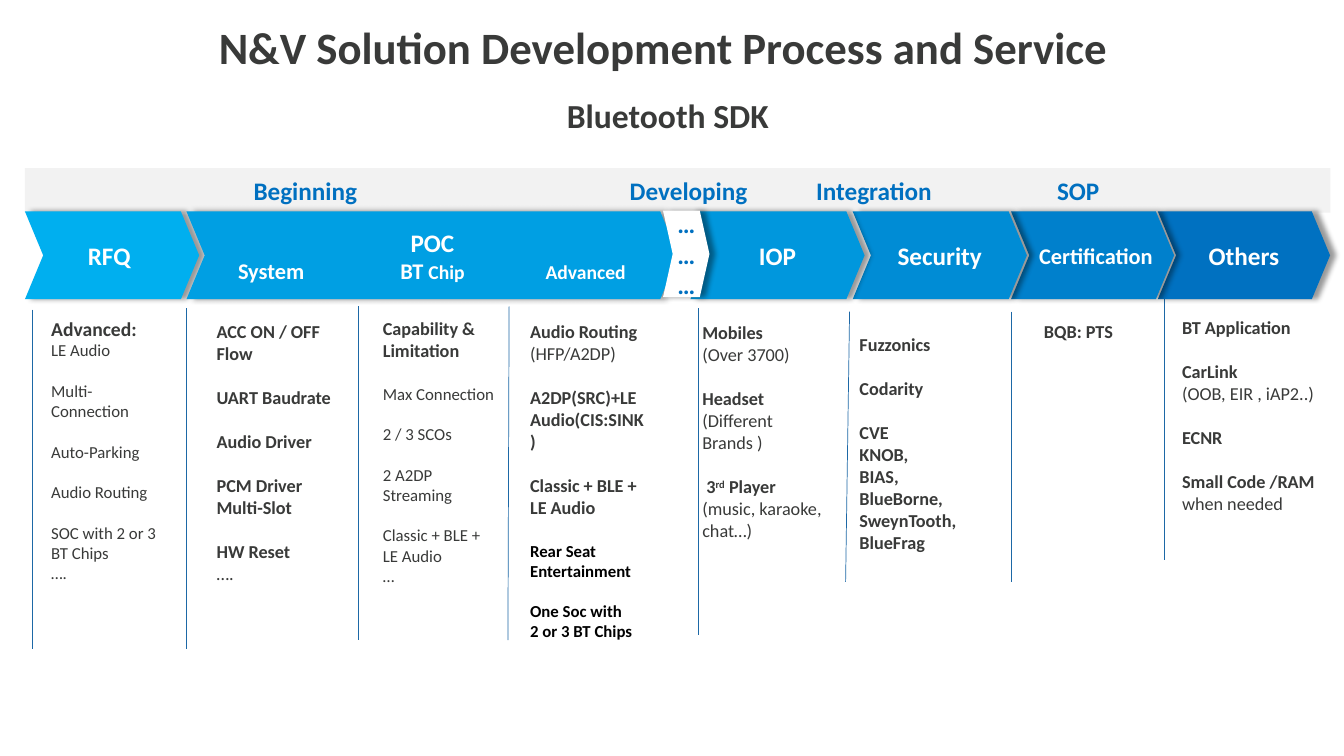
from pptx import Presentation
from pptx.util import Cm, Pt
from pptx.dml.color import RGBColor as RGB
from pptx.enum.shapes import MSO_SHAPE as Shape, MSO_CONNECTOR as Link
from pptx.enum.text import PP_ALIGN as Align, MSO_ANCHOR as Anchor
from pptx.oxml import parse_xml
from pptx.oxml.ns import nsdecls
from lxml.etree import SubElement

hues = {
    "ink": "393A39", "black": "000000", "white": "FFFFFF", "blue": "0070C0",
    "rule": "1D68A6", "bar": "F2F2F2", "rfq": "00AFEF", "poc": "009FE3",
    "iop": "0097DD", "safe": "008CD5", "cert": "0080CC", "last": "0071C1",
}
looks = {
    "title": (32, True, "ink"), "sub": (24, True, "ink"),
    "phase": (18, True, "blue"), "step": (18, True, "white"),
    "part": (16, True, "white"), "item": (14, True, "white"),
    "head": (14, True, "ink"), "bold": (13, True, "ink"),
    "text": (13, False, "ink"), "small": (12, False, "ink"),
    "dark": (12, True, "black"), "super": (13, True, "ink"),
}
wide, slim = 15.9, 14.6

deck = Presentation()
deck.slide_width, deck.slide_height = Cm(33.87), Cm(19.05)
slide = deck.slides.add_slide(deck.slide_layouts[6])
shapes = slide.shapes


def write(shape, paras, align=Align.LEFT, anchor=Anchor.TOP, tabs=(), **extra):
    frame = shape.text_frame
    for name, value in {"word_wrap": True, "vertical_anchor": anchor, **extra}.items():
        setattr(frame, name, value)
    for index, (gap, *runs) in enumerate(paras):
        para = frame.add_paragraph() if index else frame.paragraphs[0]
        tabbed = any("\t" in text for look, text in runs)
        if tabbed:
            stops = SubElement(para._p.get_or_add_pPr(), "{%s}tabLst" % para._p.nsmap["a"])
            for stop in tabs:
                SubElement(stops, "{%s}tab" % para._p.nsmap["a"], pos=str(Cm(stop)), algn="l")
        para.alignment = Align.LEFT if tabbed else align
        if gap:
            para.space_before = Pt(gap)
        for look, text in runs:
            run = para.add_run()
            run.text = text
            size, bold, hue = looks[look]
            for name, value in {"name": "Calibri", "size": Pt(size), "bold": bold}.items():
                setattr(run.font, name, value)
            run.font.color.rgb = RGB.from_string(hues[hue])
            if look == "super":
                run._r.get_or_add_rPr().set("baseline", "30000")


def draw(home, kind, box, hue):
    shape = home.add_shape(kind, *map(Cm, box))
    shape.shadow.inherit = False
    shape.fill.solid()
    shape.fill.fore_color.rgb = RGB.from_string(hues[hue])
    shape.line.fill.background()
    return shape


columns = [
    ((1.04, 7.85, 3.4, 7.01), [
        (0, ("head", "Advanced:")), (0, ("small", "LE Audio")),
        (slim, ("small", "Multi-Connection")), (slim, ("small", "Auto-Parking")),
        (slim, ("small", "Audio Routing")),
        (slim, ("small", "SOC with 2 or 3 BT Chips")), (0, ("small", "…."))]),
    ((5.21, 7.95, 3.4, 6.93), [
        (0, ("bold", "ACC ON / OFF Flow")), (wide, ("bold", "UART Baudrate")),
        (wide, ("bold", "Audio Driver")), (wide, ("bold", "PCM Driver")),
        (0, ("bold", "Multi-Slot")), (wide, ("bold", "HW Reset")), (0, ("text", "…."))]),
    ((9.4, 7.87, 3.4, 7.06), [
        (0, ("bold", "Capability &")), (0, ("bold", "Limitation")),
        (wide, ("small", "Max Connection")), (slim, ("small", "2 / 3 SCOs")),
        (slim, ("small", "2 A2DP")), (0, ("small", "Streaming")),
        (slim, ("small", "Classic + BLE +")), (0, ("small", "LE Audio")),
        (0, ("small", "…"))]),
    ((13.11, 7.95, 3.4, 8.38), [
        (0, ("bold", "Audio Routing")), (0, ("text", "(HFP/A2DP)")),
        (wide, ("bold", "A2DP(SRC)+LE Audio(CIS:SINK)")),
        (wide, ("bold", "Classic + BLE + LE Audio")),
        (wide, ("dark", "Rear Seat Entertainment")),
        (slim, ("dark", "One Soc with")), (0, ("dark", "2 or 3 BT Chips"))]),
    ((17.45, 7.98, 3.84, 5.26), [
        (0, ("bold", "Mobiles")), (0, ("text", "(Over 3700)")),
        (wide, ("bold", "Headset")), (0, ("text", "(Different Brands )")),
        (wide, ("bold", " 3"), ("super", "rd"), ("bold", " Player")),
        (0, ("text", "(music, karaoke, chat…)"))]),
    ((21.41, 8.28, 3.4, 5.82), [
        (0, ("bold", "Fuzzonics")), (wide, ("bold", "Codarity")),
        (wide, ("bold", "CVE")), (0, ("bold", "KNOB,")), (0, ("bold", "BIAS,")),
        (0, ("bold", "BlueBorne,")), (0, ("bold", "SweynTooth,")),
        (0, ("bold", "BlueFrag"))]),
    ((26.06, 7.95, 3.15, 1.93), [(0, ("bold", "BQB: PTS"))]),
    ((29.54, 7.85, 3.89, 5.82), [
        (0, ("bold", "BT Application")), (wide, ("bold", "CarLink")),
        (0, ("text", "(OOB, EIR , iAP2..)")), (wide, ("bold", "ECNR")),
        (wide, ("bold", "Small Code /RAM "), ("text", "when needed"))]),
]
for box, paras in columns:
    write(shapes.add_textbox(*map(Cm, box)), paras)

rules = [
    (0.81, 7.8, 0.81, 16.36), (4.7, 7.77, 4.7, 16.36), (9.02, 7.72, 9.02, 16.13),
    (12.83, 7.72, 12.8, 16.13), (17.6, 7.77, 17.6, 16), (21.41, 7.85, 21.31, 14.66),
    (25.48, 7.85, 25.48, 14.66), (29.34, 7.54, 29.34, 14.12),
]
for ends in rules:
    rule = shapes.add_connector(Link.STRAIGHT, *map(Cm, ends))
    rule.line.color.rgb = RGB.from_string(hues["rule"])
    rule.line.width = Pt(0.5)
    rule._element.spPr.append(parse_xml("<a:effectLst %s/>" % nsdecls("a")))

titles = [
    ((3.66, 0.36, 26.37, 1.8), "title", "N&V Solution Development Process and Service "),
    ((3.84, 2.06, 25.98, 1.8), "sub", "Bluetooth SDK"),
]
for box, look, text in titles:
    title = shapes.add_textbox(*map(Cm, box))
    write(title, [(0, (look, text))], Align.CENTER, Anchor.MIDDLE)
    title.text_frame.paragraphs[0].line_spacing = 0.9

bar = draw(shapes, Shape.RECTANGLE, (0.63, 4.24, 32.9, 1.12), "bar")
write(bar, [(0, ("phase", "\tBeginning\tDeveloping\tIntegration\tSOP"))],
      anchor=Anchor.MIDDLE, tabs=(5.51, 14.99, 19.69, 25.76))

steps = [
    (0.63, 4.39, "rfq", [(0, ("step", "RFQ "))]),
    (29.18, 4.34, "last", [(0, ("step", "Others"))]),
    (25.48, 4.11, "cert", [(0, ("part", "Certification"))]),
    (21.49, 4.39, "safe", [(0, ("step", "Security"))]),
    (4.7, 12.4, "poc", [
        (0, ("step", "POC")),
        (0, ("part", "\tSystem\tBT "), ("item", "Chip\tAdvanced"))]),
    (17.4, 4.39, "iop", [(0, ("step", "IOP"))]),
    (16.71, 1.17, "white", [(0, ("phase", "……")), (0, ("phase", "…"))]),
]
shade = (
    '<a:outerShdw %s blurRad="%d" dist="%d" dir="0" algn="l" rotWithShape="0">'
    '<a:srgbClr val="%s"><a:alpha val="40000"/></a:srgbClr></a:outerShdw>'
    % (nsdecls("a"), Pt(4), Pt(4), hues["black"])
)
group = shapes.add_group_shape()
for left, width, hue, paras in steps:
    top, height = (5.31, 2.18) if hue == "white" else (5.33, 2.21)
    step = draw(group.shapes, Shape.CHEVRON, (left, top, width, height), hue)
    step.adjustments[0] = 0.208
    step._element.spPr.find("{*}effectLst").append(parse_xml(shade))
    cert = hue == "cert"
    write(step, paras, Align.LEFT if cert else Align.CENTER, Anchor.MIDDLE,
          tabs=(0.84, 4.93, 8.59), margin_left=Cm(0.25 if cert else 0),
          margin_right=0, margin_top=0, margin_bottom=0)

deck.save("out.pptx")
